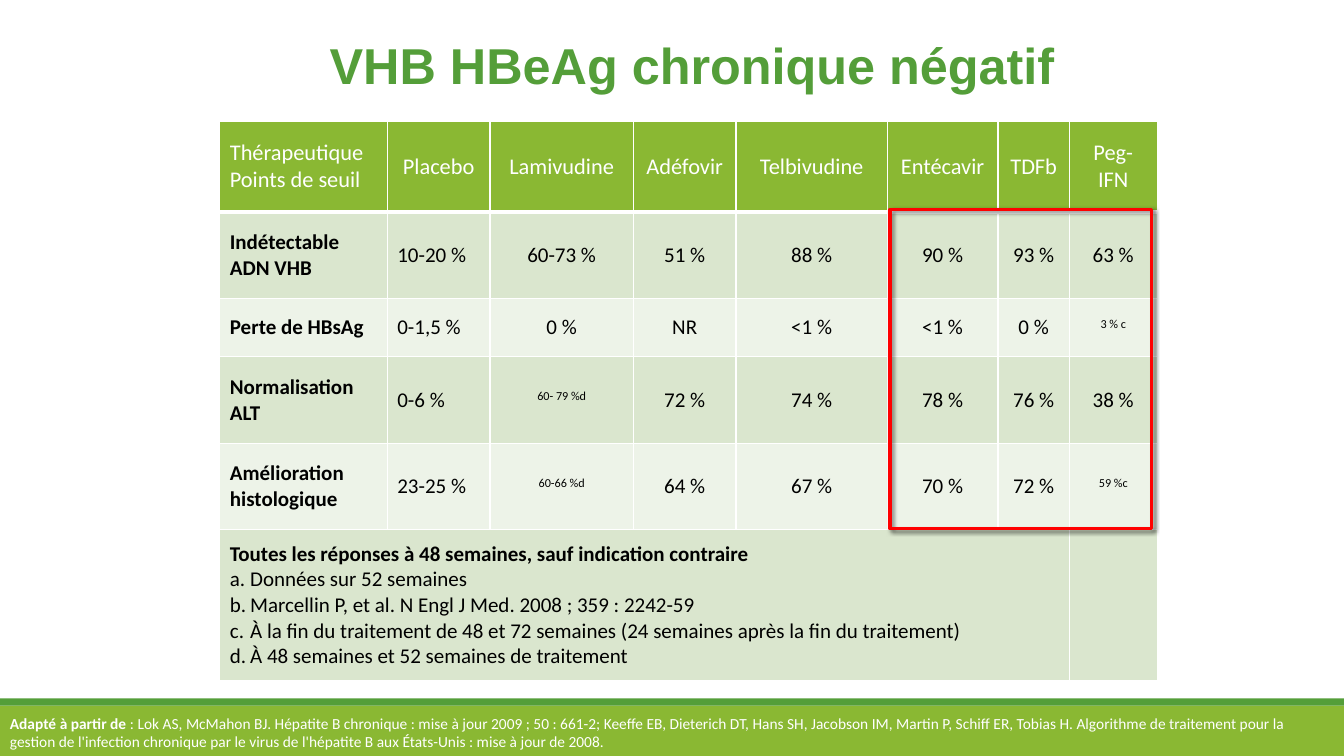
from lxml import etree
from pptx import Presentation
from pptx.dml.color import RGBColor
from pptx.enum.shapes import MSO_SHAPE
from pptx.enum.text import MSO_ANCHOR, MSO_AUTO_SIZE, PP_ALIGN
from pptx.oxml.ns import qn
from pptx.util import Cm, Pt

COLORS = {"lime": "8AB833", "green": "549E39", "band": "DAE6CE", "pale": "EDF3E8",
          "white": "FFFFFF", "black": "000000", "red": "FF0000"}

TITLE = "VHB HBeAg chronique négatif"
ROWS = [
    ["Thérapeutique\nPoints de seuil", "Placebo", "Lamivudine", "Adéfovir",
     "Telbivudine", "Entécavir", "TDFb", "Peg-IFN"],
    ["Indétectable\nADN VHB", "10-20 %", "60-73 %", "51 %", "88 %", "90 %", "93 %", "63 %"],
    ["Perte de HBsAg", "0-1,5 %", "0 %", "NR", "<1 %", "<1 %", "0 %", "3 % c"],
    ["Normalisation ALT", "0-6 %", "60- 79 %d", "72 %", "74 %", "78 %", "76 %", "38 %"],
    ["Amélioration histologique", "23-25 %", "60-66 %d", "64 %", "67 %", "70 %", "72 %", "59 %c"],
]
SUPERSCRIPTS = {(2, 7), (3, 2), (4, 2), (4, 7)}  # (row, column)
NOTES = [
    "Toutes les réponses à 48 semaines, sauf indication contraire",
    "Données sur 52 semaines",
    "Marcellin P, et al. N Engl J Med. 2008 ; 359 : 2242-59",
    "À la fin du traitement de 48 et 72 semaines (24 semaines après la fin du traitement)",
    "À 48 semaines et 52 semaines de traitement",
]
CITATION = [
    ("Adapté à partir de", True),
    (" : Lok AS, McMahon BJ. Hépatite B chronique : mise à jour 2009 ; 50 : 661-2; "
     "Keeffe EB, Dieterich DT, Hans SH, Jacobson IM, Martin P, Schiff ER, Tobias H. "
     "Algorithme de traitement pour la gestion de l'infection chronique par le virus de "
     "l'hépatite B aux États-Unis : mise à jour de 2008.", False),
]

SLIDE_W, SLIDE_H = 33.87, 19.05
TABLE_LEFT, TABLE_TOP = 5.54, 3.05
COL_WIDTHS = [4.22, 2.59, 3.61, 2.59, 3.81, 2.79, 1.8, 2.21]
ROW_HEIGHTS = [2.29, 2.18, 1.47, 2.18, 2.18, 3.81]
NOTES_ROW = len(ROWS)
LAST_COL = len(COL_WIDTHS) - 1


def color(name):
    return RGBColor.from_string(COLORS[name])


def set_font(font, size, name, color_name, bold=False):
    font.size, font.name, font.bold = Pt(size), name, bold
    font.color.rgb = color(color_name)


def add_rectangle(slide, left, top, width, height, fill=None):
    shape = slide.shapes.add_shape(MSO_SHAPE.RECTANGLE, Cm(left), Cm(top), Cm(width), Cm(height))
    shape.shadow.inherit = False
    shape.line.fill.background()
    if fill:
        shape.fill.solid()
        shape.fill.fore_color.rgb = color(fill)
    else:
        shape.fill.background()
    return shape


def add_text_frame(slide, left, top, width, height):
    frame = slide.shapes.add_textbox(Cm(left), Cm(top), Cm(width), Cm(height)).text_frame
    frame.word_wrap = True
    frame.auto_size = MSO_AUTO_SIZE.SHAPE_TO_FIT_TEXT
    return frame


def add_child(parent, tag, **attributes):
    child = etree.SubElement(parent, qn(tag))
    for key, value in attributes.items():
        child.set(key, str(value))
    return child


def style_cell(cell, fill, bottom_width=1):
    """Give a cell its white borders, then its fill (the order the schema asks for)."""
    properties = cell._tc.get_or_add_tcPr()
    for side, width in (("L", 1), ("R", 1), ("T", 1), ("B", bottom_width)):
        border = add_child(properties, f"a:ln{side}", w=Pt(width))
        add_child(add_child(border, "a:solidFill"), "a:srgbClr", val=COLORS["white"])
    cell.fill.solid()
    cell.fill.fore_color.rgb = color(fill)
    cell.vertical_anchor = MSO_ANCHOR.MIDDLE


def letter_paragraph(paragraph):
    """Number a paragraph a., b., c. with a hanging indent."""
    indent = Cm(0.51)
    properties = paragraph._p.get_or_add_pPr()
    properties.set("marL", str(indent))
    properties.set("indent", str(-indent))
    add_child(properties, "a:buAutoNum", type="alphaLcPeriod")
    add_child(add_child(properties, "a:tabLst"), "a:tab", pos=indent, algn="l")


def add_results_table(slide):
    table = slide.shapes.add_table(
        len(ROW_HEIGHTS), len(COL_WIDTHS), Cm(TABLE_LEFT), Cm(TABLE_TOP),
        Cm(sum(COL_WIDTHS)), Cm(sum(ROW_HEIGHTS))).table
    table.first_row = table.horz_banding = False
    for column, width in zip(table.columns, COL_WIDTHS):
        column.width = Cm(width)
    for row, height in zip(table.rows, ROW_HEIGHTS):
        row.height = Cm(height)

    for r in range(len(ROW_HEIGHTS)):
        fill = "lime" if r == 0 else "band" if r % 2 else "pale"
        for c in range(len(COL_WIDTHS)):
            style_cell(table.cell(r, c), fill, bottom_width=3 if r == 0 else 1)

    for r, texts in enumerate(ROWS):
        size, ink = (16, "white") if r == 0 else (15, "black")
        for c, text in enumerate(texts):
            cell = table.cell(r, c)
            cell.text = text
            centred = c > 1 or (r == 0 and c == 1)
            for paragraph in cell.text_frame.paragraphs:
                paragraph.alignment = PP_ALIGN.CENTER if centred else PP_ALIGN.LEFT
                set_font(paragraph.font, size, "Calibri", ink, bold=r > 0 and c == 0)
                if (r, c) in SUPERSCRIPTS:
                    paragraph.runs[0].font._element.set("baseline", "30000")

    notes = table.cell(NOTES_ROW, 0)
    notes.merge(table.cell(NOTES_ROW, LAST_COL - 1))
    notes.text = "\n".join(NOTES)
    for i, paragraph in enumerate(notes.text_frame.paragraphs):
        if i:
            letter_paragraph(paragraph)
        set_font(paragraph.font, 15, "Calibri", "black", bold=i == 0)


def add_highlight(slide):
    highlight = add_rectangle(slide, 22.43, 5.28, 6.6, 8.05)
    highlight.line.color.rgb = color("red")
    highlight.line.width = Pt(2.25)
    effects = highlight._element.spPr.find(qn("a:effectLst"))
    shadow = add_child(effects, "a:outerShdw", blurRad=Pt(3), dist=Pt(2), dir=45 * 60000,
                       rotWithShape=0)
    add_child(add_child(shadow, "a:srgbClr", val=COLORS["black"]), "a:alpha", val=60000)


def main():
    deck = Presentation()
    deck.slide_width, deck.slide_height = Cm(SLIDE_W), Cm(SLIDE_H)
    slide = deck.slides.add_slide(deck.slide_layouts[6])

    add_rectangle(slide, 0, 17.78, SLIDE_W, 1.27, "lime")
    add_rectangle(slide, 0, 17.6, SLIDE_W, 0.18, "green")
    add_results_table(slide)

    citation = add_text_frame(slide, 0, 17.86, SLIDE_W, 1.19).paragraphs[0]
    for text, bold in CITATION:
        run = citation.add_run()
        run.text = text
        set_font(run.font, 11, "Calibri", "white", bold)

    title_frame = add_text_frame(slide, 0, 0.74, SLIDE_W, 1.8)
    title_frame.margin_left = Cm(1.27)
    title = title_frame.paragraphs[0]
    title.text = TITLE
    title.alignment = PP_ALIGN.CENTER
    set_font(title.font, 36, "Arial", "green", bold=True)

    add_highlight(slide)
    deck.save("out.pptx")


if __name__ == "__main__":
    main()
